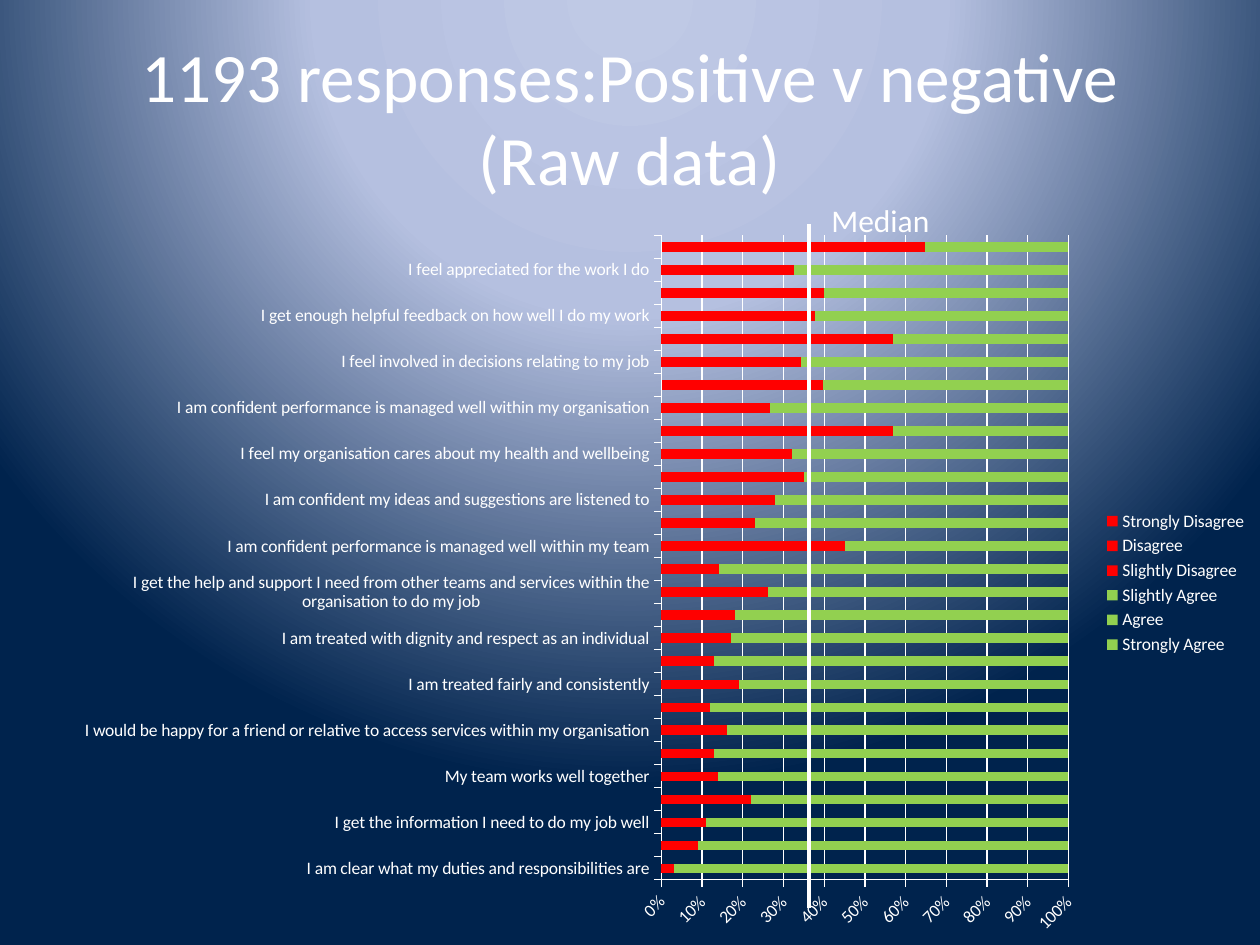
from lxml.etree import SubElement
from pptx import Presentation
from pptx.chart.data import CategoryChartData
from pptx.dml.color import RGBColor
from pptx.enum.chart import XL_CHART_TYPE, XL_LEGEND_POSITION, XL_TICK_MARK
from pptx.enum.shapes import MSO_CONNECTOR
from pptx.enum.text import MSO_ANCHOR, MSO_AUTO_SIZE, PP_ALIGN
from pptx.oxml import parse_xml
from pptx.oxml.ns import nsdecls, qn
from pptx.util import Emu, Pt

PX_PER_INCH = 126
FONT = "Calibri"
WHITE, RED, GREEN = "FFFFFF", "FF0000", "92D050"
GRADIENT = [(0, "BFC9E5"), (40, "B5C0E0"), (100, "00234D")]
STATEMENTS = [
    "I am clear what my duties and responsibilities are",
    "I get the information I need to do my job well",
    "My team works well together",
    "I would be happy for a friend or relative to access services within my organisation",
    "I am treated fairly and consistently",
    "I am treated with dignity and respect as an individual",
    "I get the help and support I need from other teams and services within the organisation to do my job",
    "I am confident performance is managed well within my team",
    "I am confident my ideas and suggestions are listened to",
    "I feel my organisation cares about my health and wellbeing",
    "I am confident performance is managed well within my organisation",
    "I feel involved in decisions relating to my job",
    "I get enough helpful feedback on how well I do my work",
    "I feel appreciated for the work I do",
]
ANSWERS = [
    ("Strongly Disagree", RED, [0, 1, 2, 2, 2, 3, 3, 3, 4, 4, 4, 4, 4, 4,
                                8, 5, 5, 6, 7, 8, 5, 8, 8, 9, 9, 9, 9, 14]),
    ("Disagree", RED, [1, 4, 3, 9, 5, 4, 5, 5, 7, 5, 6, 7, 9, 4,
                       16, 8, 11, 14, 12, 32, 9, 14, 12, 33, 14, 16, 12, 26]),
    ("Slightly Disagree", RED, [2, 4, 6, 11, 7, 6, 8, 4, 8, 4, 7, 7, 13, 6,
                                21, 10, 12, 15, 13, 17, 13, 18, 14, 15, 15, 15, 11, 24]),
    ("Slightly Agree", GREEN, [5, 16, 20, 26, 18, 18, 24, 12, 19, 18, 16, 16, 33, 15,
                               31, 30, 26, 34, 32, 21, 25, 36, 26, 20, 24, 26, 27, 24]),
    ("Agree", GREEN, [50, 60, 53, 33, 47, 45, 50, 41, 45, 46, 48, 38, 36, 43,
                      22, 40, 38, 27, 31, 16, 39, 22, 32, 18, 31, 27, 31, 10]),
    ("Strongly Agree", GREEN, [41, 15, 16, 19, 21, 25, 10, 36, 17, 23, 19, 28, 4, 27,
                               2, 7, 8, 4, 5, 6, 10, 3, 7, 5, 8, 7, 8, 1]),
]


def px(length):
    """Turn pixels into EMU."""
    return Emu(round(length * 914400 / PX_PER_INCH))


def paint(color, value):
    """Set a colour format from a hex string."""
    color.rgb = RGBColor.from_string(value)


def style_font(font, size):
    """Give a font the slide's typeface and colour."""
    font.name, font.size = FONT, Pt(size)
    paint(font.color, WHITE)


def style_line(line, width):
    """Make a line white and set its width."""
    paint(line.color, WHITE)
    line.width = Pt(width)


def set_background(page):
    """Fill the page with a radial gradient centred above its top edge."""
    page.background.fill.solid()
    stops = "".join(f'<a:gs pos="{place * 1000}"><a:srgbClr val="{value}"/></a:gs>'
                    for place, value in GRADIENT)
    gradient = parse_xml(
        f'<a:gradFill {nsdecls("a")} rotWithShape="1"><a:gsLst>{stops}</a:gsLst>'
        '<a:path path="circle"><a:fillToRect l="50000" t="-80000" r="50000" b="180000"/>'
        '</a:path></a:gradFill>')
    solid = next(page.element.iter(qn("a:solidFill")))
    solid.getparent().replace(solid, gradient)


def set_title(page, text):
    """Place and format the title placeholder."""
    title = page.shapes.title
    title.left, title.top, title.width, title.height = map(px, (63, 38, 1134, 157))
    frame = title.text_frame
    frame.text = text
    frame.word_wrap, frame.auto_size = True, MSO_AUTO_SIZE.NONE
    frame.vertical_anchor = MSO_ANCHOR.MIDDLE
    para = frame.paragraphs[0]
    para.alignment = PP_ALIGN.CENTER
    style_font(para.font, 39.6)


def add_label(page, text, left, top, width, height):
    """Add a wrapped text box."""
    frame = page.shapes.add_textbox(*map(px, (left, top, width, height))).text_frame
    frame.word_wrap, frame.text = True, text
    style_font(frame.paragraphs[0].font, 18)


def add_median_line(page, x, top, bottom):
    """Add the vertical median line."""
    line = page.shapes.add_connector(MSO_CONNECTOR.STRAIGHT, px(x), px(top), px(x), px(bottom))
    style_line(line.line, 2.5)
    SubElement(line.element.spPr, qn("a:effectLst"))


def set_plot_layout(chart, **fractions):
    """Fix the inner plot area as fractions of the chart."""
    plot_area = next(chart.element.iter(qn("c:plotArea")))
    for layout in plot_area.findall(qn("c:layout")):
        plot_area.remove(layout)
    sizes = "".join(f'<c:{key} val="{value}"/>' for key, value in fractions.items())
    plot_area.insert(0, parse_xml(
        f'<c:layout {nsdecls("c")}><c:manualLayout><c:layoutTarget val="inner"/>'
        f'<c:xMode val="edge"/><c:yMode val="edge"/>{sizes}</c:manualLayout></c:layout>'))


def style_axes(chart):
    """Format both axes, label every other bar and slant the percentages."""
    statements, shares = chart.category_axis, chart.value_axis
    for axis in (statements, shares):
        axis.major_tick_mark = XL_TICK_MARK.OUTSIDE
        style_line(axis.format.line, 0.75)
        style_font(axis.tick_labels.font, 10)
    skip = parse_xml(f'<c:tickLblSkip {nsdecls("c")} val="2"/>')
    statements._element.find(qn("c:noMultiLvlLbl")).addprevious(skip)
    shares.has_major_gridlines = True
    style_line(shares.major_gridlines.format.line, 0.75)
    shares.tick_labels.number_format = "0%"
    shares.tick_labels.number_format_is_linked = False
    next(shares._element.iter(qn("a:bodyPr"))).set("rot", "-2700000")


def add_survey_chart(page):
    """Add the stacked bars, with an unlabelled bar after each statement."""
    data = CategoryChartData()
    data.categories = [label for statement in STATEMENTS for label in (statement, "")]
    for name, _, values in ANSWERS:
        data.add_series(name, values)
    chart = page.shapes.add_chart(
        XL_CHART_TYPE.BAR_STACKED_100, *map(px, (63, 221, 1197, 724)), data).chart
    style_font(chart.font, 10)
    chart.has_title = False
    chart.has_legend = True
    chart.legend.position = XL_LEGEND_POSITION.RIGHT
    chart.legend.include_in_layout = False
    style_font(chart.legend.font, 10)
    plot = chart.plots[0]
    plot.gap_width, plot.overlap, plot.vary_by_categories = 150, 100, False
    for series, (_, color, _) in zip(plot.series, ANSWERS):
        series.format.fill.solid()
        paint(series.format.fill.fore_color, color)
    style_axes(chart)
    set_plot_layout(chart, x=0.5, y=0.02, w=0.34, h=0.89)


def main():
    """Build and save the deck."""
    deck = Presentation()
    deck.slide_width, deck.slide_height = px(1260), px(945)
    page = deck.slides.add_slide(deck.slide_layouts[5])
    set_background(page)
    set_title(page, "1193 responses:Positive v negative\v(Raw data)")
    add_survey_chart(page)
    add_label(page, "Median", 819, 195, 198, 50)
    add_median_line(page, 809, 224, 908)
    deck.save("out.pptx")


if __name__ == "__main__":
    main()
